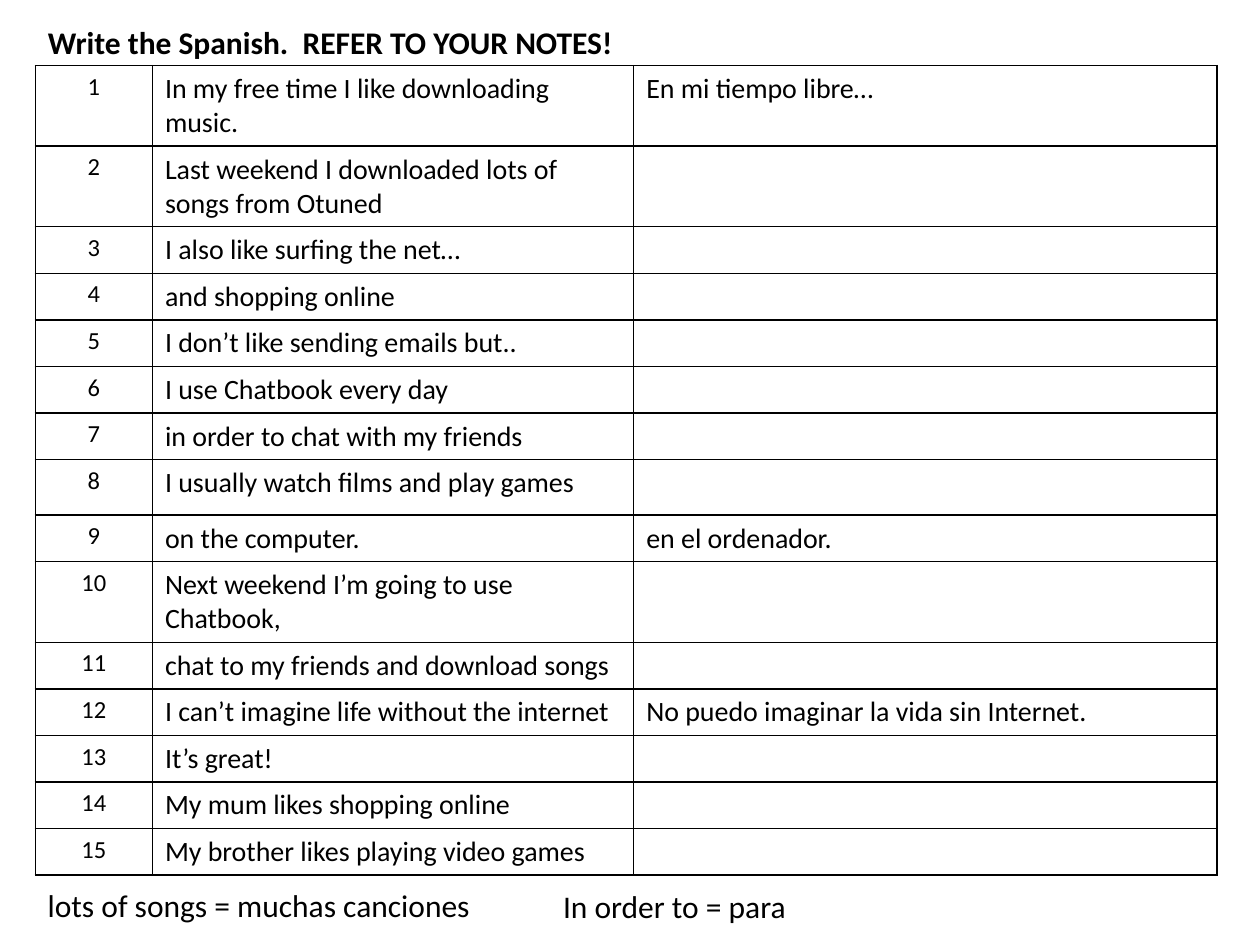
from lxml.etree import SubElement
from pptx import Presentation
from pptx.dml.color import RGBColor
from pptx.enum.text import MSO_ANCHOR, MSO_AUTO_SIZE, PP_ALIGN
from pptx.oxml.ns import qn
from pptx.util import Inches, Pt

TITLE = "Write the Spanish.  REFER TO YOUR NOTES!"
SENTENCES = [
    ("In my free time I like downloading music.", "En mi tiempo libre…"),
    ("Last weekend I downloaded lots of songs from Otuned", ""),
    ("I also like surfing the net…", ""),
    ("and shopping online", ""),
    ("I don’t like sending emails but..", ""),
    ("I use Chatbook every day", ""),
    ("in order to chat with my friends", ""),
    ("I usually watch films and play games", ""),
    ("on the computer.", "en el ordenador."),
    ("Next weekend I’m going to use Chatbook,", ""),
    ("chat to my friends and download songs", ""),
    ("I can’t imagine life without the internet", "No puedo imaginar la vida sin Internet."),
    ("It’s great!", ""),
    ("My mum likes shopping online", ""),
    ("My brother likes playing video games", ""),
]
HINTS = [
    ("lots of songs = muchas canciones", 0.28, 6.98),
    ("In order to = para", 4.37, 6.99),
]
COLUMN_WIDTHS = (0.93, 3.82, 4.63)
COLUMN_SIZES = (14, 16, 16)
ROW_HEIGHT = 0.37
SPECIAL_HEIGHTS = {1: 0.64, 2: 0.64, 8: 0.44, 10: 0.64}
LEFT, TABLE_TOP = 0.28, 0.52
BLACK = "000000"


def color(value):
    return RGBColor.from_string(value)


def format_text(paragraph, size, bold=False):
    for run in paragraph.runs:
        run.font.name = "Calibri"
        run.font.size = Pt(size)
        run.font.bold = bold
        run.font.color.rgb = color(BLACK)


def place_text(shape, text, left, top, width, bold=False):
    shape.left, shape.top = Inches(left), Inches(top)
    shape.width, shape.height = Inches(width), Inches(0.4)
    frame = shape.text_frame
    frame.text = text
    frame.word_wrap = True
    frame.auto_size = MSO_AUTO_SIZE.SHAPE_TO_FIT_TEXT
    frame.vertical_anchor = MSO_ANCHOR.TOP
    frame.paragraphs[0].alignment = PP_ALIGN.LEFT
    format_text(frame.paragraphs[0], 18, bold)


def add_borders(cell):
    properties = cell._tc.get_or_add_tcPr()
    for side in ("lnL", "lnR", "lnT", "lnB"):
        line = SubElement(properties, qn(f"a:{side}"), w=str(Pt(1)))
        fill = SubElement(line, qn("a:solidFill"))
        SubElement(fill, qn("a:srgbClr"), val=BLACK)


def fill_cell(cell, text, size):
    add_borders(cell)
    cell.fill.background()
    paragraph = cell.text_frame.paragraphs[0]
    if text:
        paragraph.text = text
        format_text(paragraph, size)
    else:
        SubElement(paragraph._p, qn("a:endParaRPr"), sz=str(size * 100))
    return paragraph


def add_worksheet(slide):
    heights = [SPECIAL_HEIGHTS.get(number, ROW_HEIGHT) for number in range(1, len(SENTENCES) + 1)]
    table = slide.shapes.add_table(
        len(SENTENCES), len(COLUMN_WIDTHS), Inches(LEFT), Inches(TABLE_TOP),
        Inches(sum(COLUMN_WIDTHS)), Inches(sum(heights)),
    ).table
    table.first_row = False
    table.horz_banding = False
    for column, width in zip(table.columns, COLUMN_WIDTHS):
        column.width = Inches(width)
    for number, (row, height, sentence) in enumerate(zip(table.rows, heights, SENTENCES), 1):
        row.height = Inches(height)
        for cell, text, size in zip(row.cells, (str(number), *sentence), COLUMN_SIZES):
            fill_cell(cell, text, size)
        row.cells[0].text_frame.paragraphs[0].alignment = PP_ALIGN.CENTER


def main():
    presentation = Presentation()
    presentation.slide_width, presentation.slide_height = Inches(10), Inches(7.5)
    slide = presentation.slides.add_slide(presentation.slide_layouts[5])
    add_worksheet(slide)
    for text, left, top in HINTS:
        textbox = slide.shapes.add_textbox(0, 0, 0, 0)
        place_text(textbox, text, left, top, 4.41)
    place_text(slide.shapes.title, TITLE, LEFT, 0.13, 9.53, bold=True)
    presentation.save("out.pptx")


if __name__ == "__main__":
    main()
